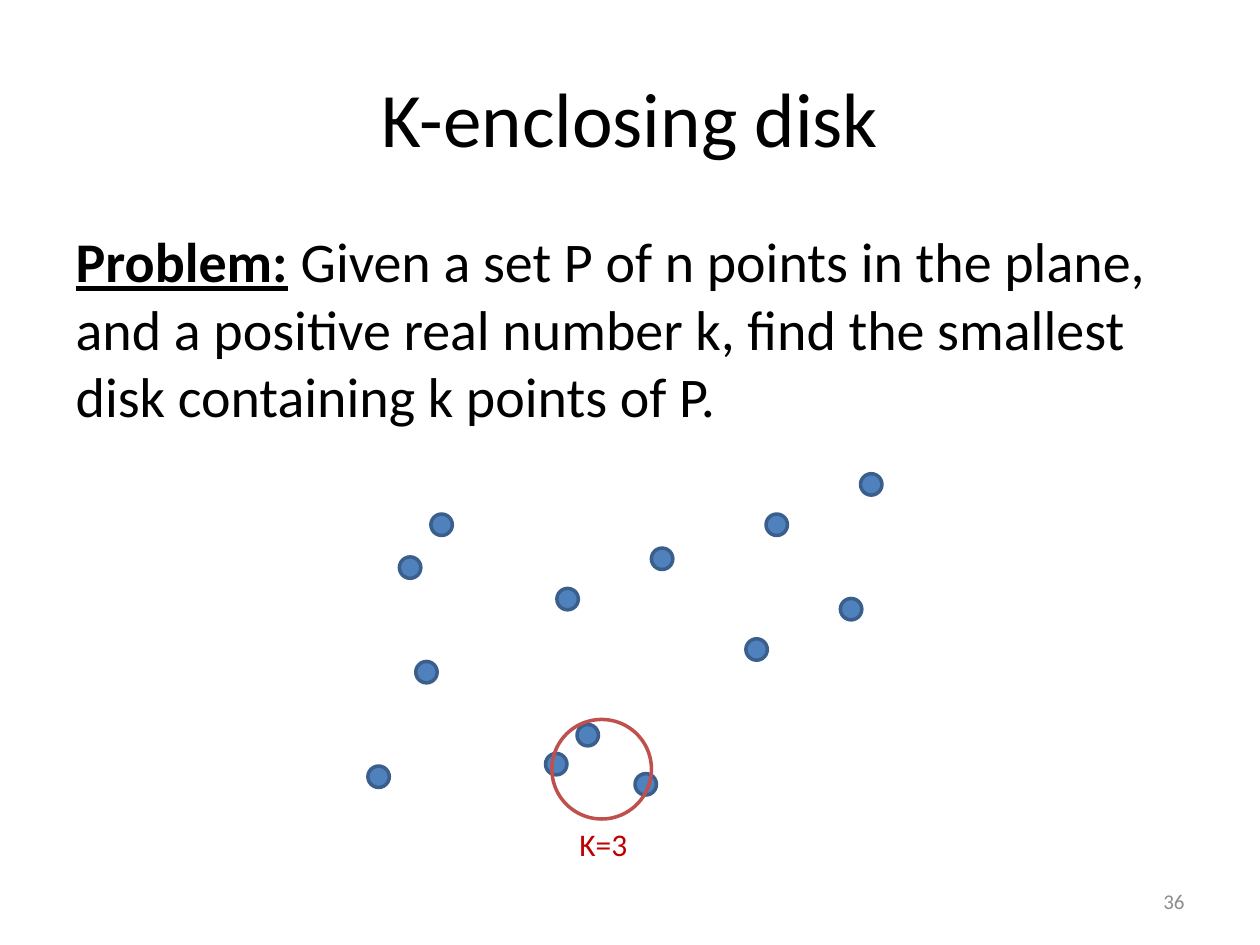
from pptx import Presentation
from pptx.dml.color import RGBColor
from pptx.enum import shapes, text
from pptx.oxml.ns import qn
from pptx.util import Inches, Pt

BLACK = RGBColor(0x00, 0x00, 0x00)
GRAY = RGBColor(0x8C, 0x8C, 0x8C)
BLUE = RGBColor(0x4F, 0x81, 0xBD)
DARK_BLUE = RGBColor(0x3A, 0x5F, 0x8C)
RED = RGBColor(0xC0, 0x50, 0x4D)
DARK_RED = RGBColor(0xC0, 0x00, 0x00)

# Content
TITLE = "K-enclosing disk"
TERM = "Problem:"
STATEMENT = (" Given a set P of n points in the plane, and a positive real "
             "number k, find the smallest disk containing k points of P.")
DISK_LABEL = "K=3"
PAGE = "36"

# Left and top of each point; then the enclosing disk
POINT_SIZE = 0.17
POINTS = [(3.17, 4.42), (4.42, 4.67), (2.92, 6.08), (4.58, 5.75), (3.42, 4.08),
          (4.33, 5.98), (3.3, 5.25), (6.08, 4.08), (5.92, 5.07), (5.17, 4.35),
          (6.83, 3.76), (6.67, 4.75), (5.04, 6.14)]
DISK_AT, DISK_SIZE = (4.38, 5.71), 0.79


def place(s, left, top, width, height):
    s.left, s.top, s.width, s.height = map(Inches, (left, top, width, height))
    s.text_frame.word_wrap = True
    return s.text_frame


def add_run(p, words, size=32, color=BLACK, bold=False, underline=False):
    r = p.add_run()
    r.text = words
    r.font.name, r.font.size = "Calibri", Pt(size)
    r.font.bold, r.font.underline = bold, underline
    r.font.color.rgb = color


def add_circle(at, size, line, fill=None):
    s = slide.shapes.add_shape(shapes.MSO_SHAPE.OVAL, *map(Inches, (*at, size, size)))
    s.shadow.inherit = False
    if fill is None:
        s.fill.background()
    else:
        s.fill.solid()
        s.fill.fore_color.rgb = fill
    s.line.color.rgb = line
    s.line.width = Pt(2)


def add_label(words, box, align, anchor, **style):
    tf = place(slide.shapes.add_textbox(0, 0, 0, 0), *box)
    tf.vertical_anchor = anchor
    p = tf.paragraphs[0]
    p.alignment = align
    add_run(p, words, **style)


prs = Presentation()
prs.slide_width, prs.slide_height = Inches(10), Inches(7.5)
slide = prs.slides.add_slide(prs.slide_layouts[1])

# Title
tf = place(slide.shapes.title, 0.5, 0.3, 9, 1.25)
tf.vertical_anchor = text.MSO_ANCHOR.MIDDLE
p = tf.paragraphs[0]
p.alignment = text.PP_ALIGN.CENTER
add_run(p, TITLE, size=44)

# Problem statement, without a bullet
p = place(slide.placeholders[1], 0.5, 1.75, 9, 4.95).paragraphs[0]
pPr = p._p.get_or_add_pPr()
pPr.set("marL", "0")
pPr.set("indent", "0")
pPr.append(pPr.makeelement(qn("a:buNone"), {}))
p.space_before = Pt(0)
add_run(p, TERM, bold=True, underline=True)
add_run(p, STATEMENT)

# Slide number
add_label(PAGE, (7.17, 6.95, 2.33, 0.4), text.PP_ALIGN.RIGHT,
          text.MSO_ANCHOR.MIDDLE, size=12, color=GRAY)

# Points and the disk around three of them
for at in POINTS:
    add_circle(at, POINT_SIZE, DARK_BLUE, fill=BLUE)
add_circle(DISK_AT, DISK_SIZE, RED)
add_label(DISK_LABEL, (4.5, 6.5, 1.75, 0.4), text.PP_ALIGN.LEFT,
          text.MSO_ANCHOR.TOP, size=18, color=DARK_RED)

prs.save("out.pptx")
